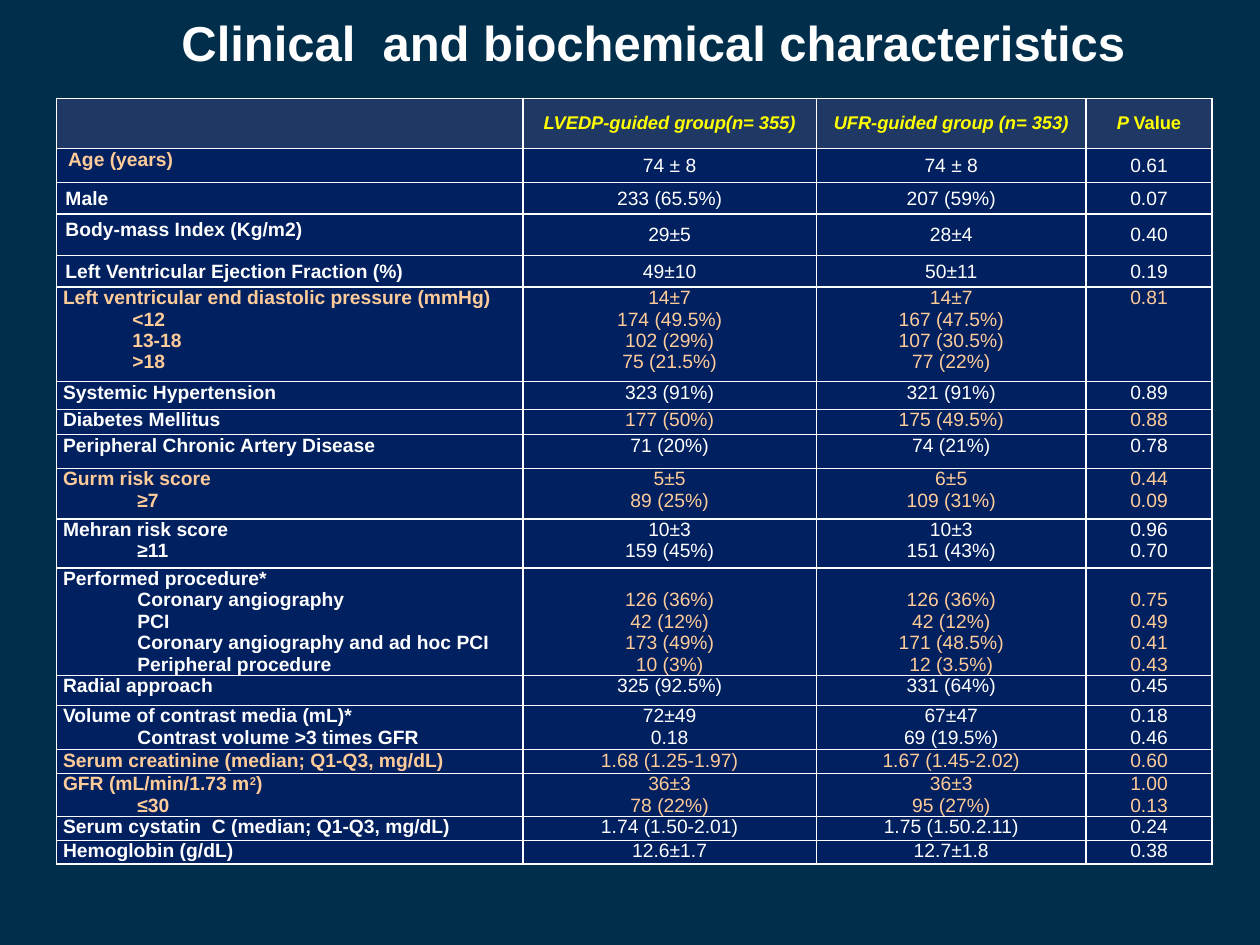
from dataclasses import dataclass

from lxml import etree
from pptx import Presentation
from pptx import util as u
from pptx.dml.color import RGBColor
from pptx.enum import text
from pptx.oxml import ns


@dataclass(frozen=True)
class Theme:
    font: str = "Arial"
    background: str = "002E4B"
    header_fill: str = "203864"
    body_fill: str = "002060"
    white: str = "FFFFFF"
    yellow: str = "FFFF00"
    peach: str = "FFCC99"
    title_size: float = 28
    header_size: float = 10.5
    body_size: float = 11


@dataclass(frozen=True)
class Row:
    """One characteristic; lines after the first of a label are indented."""
    height: float
    cells: tuple
    label_color: str = Theme.white
    value_color: str = Theme.white
    padded: bool = False
    label_inset: float = 0
    indent: float = 0.59
    values_at_bottom: bool = False


WHITE, PEACH = Theme.white, Theme.peach
TITLE = "Clinical  and biochemical characteristics"
COLUMN_WIDTHS = (3.7, 2.33, 2.14, 1)
HEADER_HEIGHT = 0.4
HEADERS = ("", "LVEDP-guided group(n= 355)", "UFR-guided group (n= 353)", "P ^Value")
WIDE_MARGINS, TIGHT_MARGINS = (0.07, 0.04), (0.05, 0)

ROWS = (
    Row(0.27, ("Age (years)", "74 ± 8", "74 ± 8", "0.61"), PEACH, padded=True, label_inset=0.04),
    Row(0.25, ("Male", "233 (65.5%)", "207 (59%)", "0.07"), padded=True),
    Row(0.33, ("Body-mass Index (Kg/m2)", "29±5", "28±4", "0.40"), padded=True),
    Row(0.25, ("Left Ventricular Ejection Fraction (%)", "49±10", "50±11", "0.19"), padded=True),
    Row(0.75, ("Left ventricular end diastolic pressure (mmHg)\n<12\n13-18\n>18",
               "14±7\n174 (49.5%)\n102 (29%)\n75 (21.5%)",
               "14±7\n167 (47.5%)\n107 (30.5%)\n77 (22%)", "0.81"), PEACH, PEACH, indent=0.55),
    Row(0.22, ("Systemic Hypertension", "323 (91%)", "321 (91%)", "0.89")),
    Row(0.2, ("Diabetes Mellitus", "177 (50%)", "175 (49.5%)", "0.88"), WHITE, PEACH),
    Row(0.27, ("Peripheral Chronic Artery Disease", "71 (20%)", "74 (21%)", "0.78")),
    Row(0.4, ("Gurm risk score\n≥7", "5±5\n89 (25%)", "6±5\n109 (31%)", "0.44\n0.09"),
        PEACH, PEACH),
    Row(0.39, ("Mehran risk score\n≥11", "10±3\n159 (45%)", "10±3\n151 (43%)", "0.96\n0.70")),
    Row(0.75, ("Performed procedure*\nCoronary angiography\nPCI\n"
               "Coronary angiography and ad hoc PCI\nPeripheral procedure",
               "126 (36%)\n42 (12%)\n173 (49%)\n10 (3%)",
               "126 (36%)\n42 (12%)\n171 (48.5%)\n12 (3.5%)",
               "0.75\n0.49\n0.41\n0.43"), WHITE, PEACH, values_at_bottom=True),
    Row(0.24, ("Radial approach", "325 (92.5%)", "331 (64%)", "0.45")),
    Row(0.35, ("Volume of contrast media (mL)*\nContrast volume >3 times GFR",
               "72±49\n0.18", "67±47\n69 (19.5%)", "0.18\n0.46")),
    Row(0.19, ("Serum creatinine (median; Q1-Q3, mg/dL)",
               "1.68 (1.25-1.97)", "1.67 (1.45-2.02)", "0.60"), PEACH, PEACH),
    Row(0.19, ("GFR (mL/min/1.73 m^2^)\n≤30", "36±3\n78 (22%)", "36±3\n95 (27%)", "1.00\n0.13"),
        PEACH, PEACH),
    Row(0.19, ("Serum cystatin  C (median; Q1-Q3, mg/dL)",
               "1.74 (1.50-2.01)", "1.75 (1.50.2.11)", "0.24")),
    Row(0.19, ("Hemoglobin (g/dL)", "12.6±1.7", "12.7±1.8", "0.38")),
)


def rgb(color):
    return RGBColor.from_string(color)


def write(frame, content, *, size, color, bold=False, italic=False, center=True,
          inset=0, indent=0, superscript=True):
    """Fill a text frame; parts between ^ marks are superscript, or else upright."""
    for index, line in enumerate(content.split("\n")):
        para = frame.paragraphs[0] if index == 0 else frame.add_paragraph()
        para.alignment = text.PP_ALIGN.CENTER if center else text.PP_ALIGN.LEFT
        left = indent if index else inset
        if left:
            properties = para._p.get_or_add_pPr()
            properties.set("marL", str(u.Inches(left)))
            properties.set("indent", "0")
        para.font.size = u.Pt(size)
        for number, part in enumerate(line.split("^")):
            if not part:
                continue
            marked = number % 2 == 1
            span = para.add_run()
            span.text = part
            font = span.font
            font.name, font.size, font.bold = Theme.font, u.Pt(size), bold
            font.italic = italic and not marked
            font.color.rgb = rgb(color)
            if marked and superscript:
                span._r.get_or_add_rPr().set("baseline", "30000")


def add_borders(cell, color, width=1):
    properties = cell._tc.get_or_add_tcPr()
    for index, side in enumerate(("lnL", "lnR", "lnT", "lnB")):
        line = etree.Element(ns.qn("a:" + side), w=str(u.Pt(width)))
        fill = etree.SubElement(line, ns.qn("a:solidFill"))
        etree.SubElement(fill, ns.qn("a:srgbClr"), val=color)
        properties.insert(index, line)


class SlideBuilder:
    def __init__(self, deck, theme):
        self.theme = theme
        self.page = deck.slides.add_slide(deck.slide_layouts[5])
        fill = self.page.background.fill
        fill.solid()
        fill.fore_color.rgb = rgb(theme.background)

    def title(self, content, left, top, width, height):
        box = self.page.shapes.title
        box.left, box.top, box.width, box.height = map(u.Inches, (left, top, width, height))
        frame = box.text_frame
        frame.word_wrap, frame.auto_size = True, text.MSO_AUTO_SIZE.NONE
        frame.vertical_anchor = text.MSO_ANCHOR.TOP
        frame.margin_left = frame.margin_right = frame.margin_bottom = u.Inches(0.05)
        frame.margin_top = u.Inches(0.09)
        write(frame, content, size=self.theme.title_size, color=self.theme.white, bold=True)

    def cell(self, cell, content, fill, margins, anchor, **style):
        cell.fill.solid()
        cell.fill.fore_color.rgb = rgb(fill)
        add_borders(cell, self.theme.white)
        cell.margin_left = cell.margin_right = u.Inches(margins[0])
        cell.margin_top = cell.margin_bottom = u.Inches(margins[1])
        cell.vertical_anchor = anchor
        write(cell.text_frame, content, **style)

    def table(self, left, top):
        theme, anchors = self.theme, text.MSO_ANCHOR
        heights = [HEADER_HEIGHT] + [row.height for row in ROWS]
        table = self.page.shapes.add_table(
            len(heights), len(COLUMN_WIDTHS), u.Inches(left), u.Inches(top),
            u.Inches(sum(COLUMN_WIDTHS)), u.Inches(sum(heights))).table
        table.first_row = table.horz_banding = False
        for column, width in zip(table.columns, COLUMN_WIDTHS):
            column.width = u.Inches(width)
        for line, height in zip(table.rows, heights):
            line.height = u.Inches(height)
        for column, header in enumerate(HEADERS):
            self.cell(table.cell(0, column), header, theme.header_fill, WIDE_MARGINS,
                      anchors.MIDDLE, size=theme.header_size, color=theme.yellow,
                      bold=True, italic=True, superscript=False)
        for number, row in enumerate(ROWS, start=1):
            margins = WIDE_MARGINS if row.padded else TIGHT_MARGINS
            value_anchor = (anchors.MIDDLE if row.padded else
                            anchors.BOTTOM if row.values_at_bottom else anchors.TOP)
            label, *values = row.cells
            self.cell(table.cell(number, 0), label, theme.body_fill,
                      TIGHT_MARGINS if row.label_inset else margins, anchors.TOP,
                      size=theme.body_size, color=row.label_color, bold=True, center=False,
                      inset=row.label_inset, indent=row.indent)
            for column, value in enumerate(values, start=1):
                self.cell(table.cell(number, column), value, theme.body_fill, margins,
                          value_anchor, size=theme.body_size, color=row.value_color)


def main():
    deck = Presentation()
    deck.slide_width, deck.slide_height = u.Inches(10), u.Inches(7.5)
    slide = SlideBuilder(deck, Theme())
    slide.title(TITLE, 0.75, 0.01, 8.87, 0.83)
    slide.table(0.45, 0.78)
    deck.save("out.pptx")


if __name__ == "__main__":
    main()
